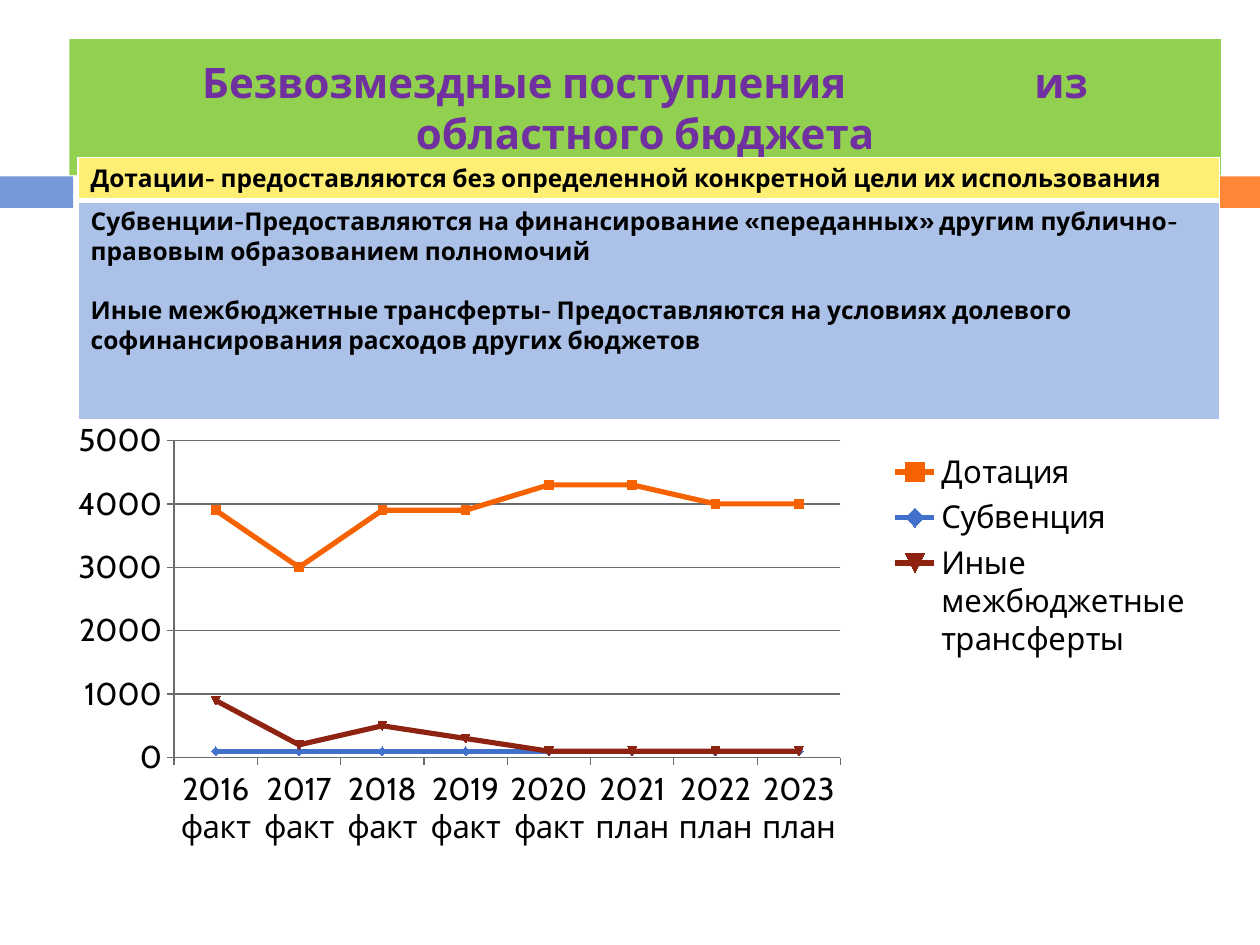
"""Build a slide on gratuitous receipts from the regional budget."""
from typing import NamedTuple

import lxml.etree
import pptx
import pptx.chart.data
import pptx.dml.color
import pptx.enum.chart
import pptx.enum.shapes
import pptx.enum.text
import pptx.oxml
import pptx.oxml.ns
import pptx.util

RGBColor = pptx.dml.color.RGBColor
WHITE = RGBColor(0xFF, 0xFF, 0xFF)
BLACK = RGBColor(0, 0, 0)
GREY = RGBColor(0x6B, 0x6B, 0x6B)
GREEN = RGBColor(0x92, 0xD0, 0x50)
PURPLE = RGBColor(0x70, 0x30, 0xA0)
BLUE = RGBColor(0x75, 0x98, 0xD9)
ORANGE = RGBColor(0xFE, 0x86, 0x37)
RED = RGBColor(0xB3, 0x2C, 0x16)
YELLOW = RGBColor(0xFF, 0xEE, 0x74)
PALE_BLUE = RGBColor(0xAC, 0xC1, 0xE8)

FONT = "Cabin"
COLUMNS, ROWS = 100, 75
WIDTH, HEIGHT = pptx.util.Inches(10), pptx.util.Inches(7.5)


class Box(NamedTuple):
    """Place on the slide grid, in columns and rows."""
    col: float
    row: float
    cols: float
    rows: float

    def emu(self) -> list[int]:
        """Return left, top, width and height as lengths."""
        x, y = WIDTH / COLUMNS, HEIGHT / ROWS
        return [round(v) for v in (self.col * x, self.row * y, self.cols * x, self.rows * y)]


class Panel(NamedTuple):
    """A filled rectangle."""
    box: Box
    color: RGBColor


class Definition(NamedTuple):
    """A table row that explains kinds of transfer."""
    paragraphs: list[str]
    rows: float
    color: RGBColor
    bottom: float


class Series(NamedTuple):
    """A line of the chart."""
    name: str
    values: list[int]
    color: RGBColor


PANELS = [
    Panel(Box(0, 14, 5.8, 2.5), BLUE),
    Panel(Box(6.5, 14, 93.5, 2.5), ORANGE),
]
TITLE = Panel(Box(5.5, 3.1, 91.4, 10.8), GREEN)
TITLE_RUNS = ["Безвозмездные поступления", " ", "из областного бюджета"]
TITLE_GAP = 102
CHART_BOX = Box(6.2, 30.5, 89.6, 40.6)
TABLE_BOX = Box(6.2, 12.5, 90.6, 20.8)
DEFINITIONS = [
    Definition(["Дотации- предоставляются без определенной конкретной цели их использования"],
               3.4, YELLOW, 3),
    Definition(["Субвенции-Предоставляются на финансирование «переданных» другим "
                "публично-правовым образованием полномочий",
                "Иные межбюджетные трансферты- Предоставляются на условиях долевого "
                "софинансирования расходов других бюджетов"], 17.4, PALE_BLUE, 1),
]
CATEGORIES = ([f"{y} факт" for y in range(2016, 2021)]
              + [f"{y} план" for y in range(2021, 2024)])
SERIES = [
    Series("Дотация", [3900, 3000, 3900, 3900, 4300, 4300, 4000, 4000], ORANGE),
    Series("Субвенция", [100] * 8, BLUE),
    Series("Иные межбюджетные трансферты", [900, 200, 500, 300, 100, 100, 100, 100], RED),
]


def style(font, size: float, color: RGBColor, bold: bool = False) -> None:
    """Set the look of a font."""
    font.name, font.size, font.bold = FONT, pptx.util.Pt(size), bold
    font.color.rgb = color


def draw_panel(s, panel: Panel):
    """Draw a rectangle without outline and return it."""
    sp = s.shapes.add_shape(pptx.enum.shapes.MSO_SHAPE.RECTANGLE, *panel.box.emu())
    sp.shadow.inherit = False
    sp.fill.solid()
    sp.fill.fore_color.rgb = panel.color
    sp.line.fill.background()
    return sp


def draw_title(s) -> None:
    """Draw the title with a wide gap inside its first line."""
    tf = draw_panel(s, TITLE).text_frame
    tf.word_wrap = True
    tf.vertical_anchor = pptx.enum.text.MSO_ANCHOR.MIDDLE
    p = tf.paragraphs[0]
    p.alignment = pptx.enum.text.PP_ALIGN.CENTER
    for text in TITLE_RUNS:
        r = p.add_run()
        r.text = text
        style(r.font, 24, PURPLE, bold=True)
    p.runs[1].font._element.set("spc", str(TITLE_GAP * 100))


def set_layout(element, x: float, y: float, w: float, h: float, inner: bool = False) -> None:
    """Place a chart part by shares of the chart."""
    layout = element.get_or_add_layout() if hasattr(element, "get_or_add_layout") else None
    if layout is None:
        layout = element.find(pptx.oxml.ns.qn("c:layout"))
    if layout is None:
        layout = lxml.etree.Element(pptx.oxml.ns.qn("c:layout"))
        is_legend = element.tag == pptx.oxml.ns.qn("c:legend")
        element.insert(1 if is_legend else 0, layout)
    for child in list(layout):
        layout.remove(child)
    manual = lxml.etree.SubElement(layout, pptx.oxml.ns.qn("c:manualLayout"))
    settings = [("layoutTarget", "inner")] if inner else []
    settings += [("xMode", "edge"), ("yMode", "edge"), ("x", x), ("y", y), ("w", w), ("h", h)]
    for tag, value in settings:
        lxml.etree.SubElement(manual, pptx.oxml.ns.qn(f"c:{tag}")).set("val", str(value))


def draw_chart(s) -> None:
    """Draw the line chart of receipts by year."""
    data = pptx.chart.data.CategoryChartData()
    data.categories = CATEGORIES
    for series in SERIES:
        data.add_series(series.name, series.values)
    kind = pptx.enum.chart.XL_CHART_TYPE.LINE_MARKERS
    chart = s.shapes.add_chart(kind, *CHART_BOX.emu(), data).chart
    style(chart.font, 18, BLACK)
    chart.has_title = False
    chart.has_legend = True
    chart.legend.position = pptx.enum.chart.XL_LEGEND_POSITION.RIGHT
    chart.legend.include_in_layout = False
    set_layout(chart.legend._element, 0.71, 0.12, 0.28, 0.43)
    plot = chart.plots[0]
    plot.vary_by_categories = False
    set_layout(chart._chartSpace.chart.plotArea, 0.07, 0.11, 0.6, 0.62, inner=True)
    for line, series in zip(plot.series, SERIES):
        line.smooth = False
        line.format.line.width = pptx.util.Pt(3)
        line.marker.format.fill.solid()
        line.marker.format.line.fill.solid()
        for color in (line.format.line.color, line.marker.format.fill.fore_color,
                      line.marker.format.line.color):
            color.rgb = series.color
            color.brightness = -0.2
    axis = chart.value_axis
    axis.minimum_scale, axis.maximum_scale, axis.major_unit = 0, 5000, 1000
    axis.has_major_gridlines = True
    for item in (axis, chart.category_axis, axis.major_gridlines):
        item.format.line.color.rgb = GREY
        item.format.line.width = pptx.util.Pt(0.75)


def set_borders(cell, bottom: float) -> None:
    """Give a cell white borders."""
    props = cell._tc.get_or_add_tcPr()
    for i, (side, width) in enumerate(zip("LRTB", (1, 1, 1, bottom))):
        ns = pptx.oxml.ns.nsdecls("a")
        props.insert(i, pptx.oxml.parse_xml(
            f'<a:ln{side} {ns} w="{pptx.util.Pt(width)}"><a:solidFill>'
            f'<a:srgbClr val="{WHITE}"/></a:solidFill></a:ln{side}>'))


def draw_table(s) -> None:
    """Draw the table of definitions."""
    table = s.shapes.add_table(len(DEFINITIONS), 1, *TABLE_BOX.emu()).table
    for i, definition in enumerate(DEFINITIONS):
        table.rows[i].height = round(definition.rows * HEIGHT / ROWS)
        cell = table.cell(i, 0)
        cell.fill.solid()
        cell.fill.fore_color.rgb = definition.color
        cell.text_frame.text = "\n".join(definition.paragraphs)
        for j, p in enumerate(cell.text_frame.paragraphs):
            p.space_before = pptx.util.Pt(17 if j else 0)
            style(p.runs[0].font, 14, BLACK, bold=True)
        set_borders(cell, definition.bottom)


def main() -> None:
    """Build and save the slide."""
    prs = pptx.Presentation()
    prs.slide_width, prs.slide_height = WIDTH, HEIGHT
    s = prs.slides.add_slide(prs.slide_layouts[6])
    for panel in PANELS:
        draw_panel(s, panel)
    draw_title(s)
    draw_chart(s)
    draw_table(s)
    prs.save("out.pptx")


if __name__ == "__main__":
    main()
